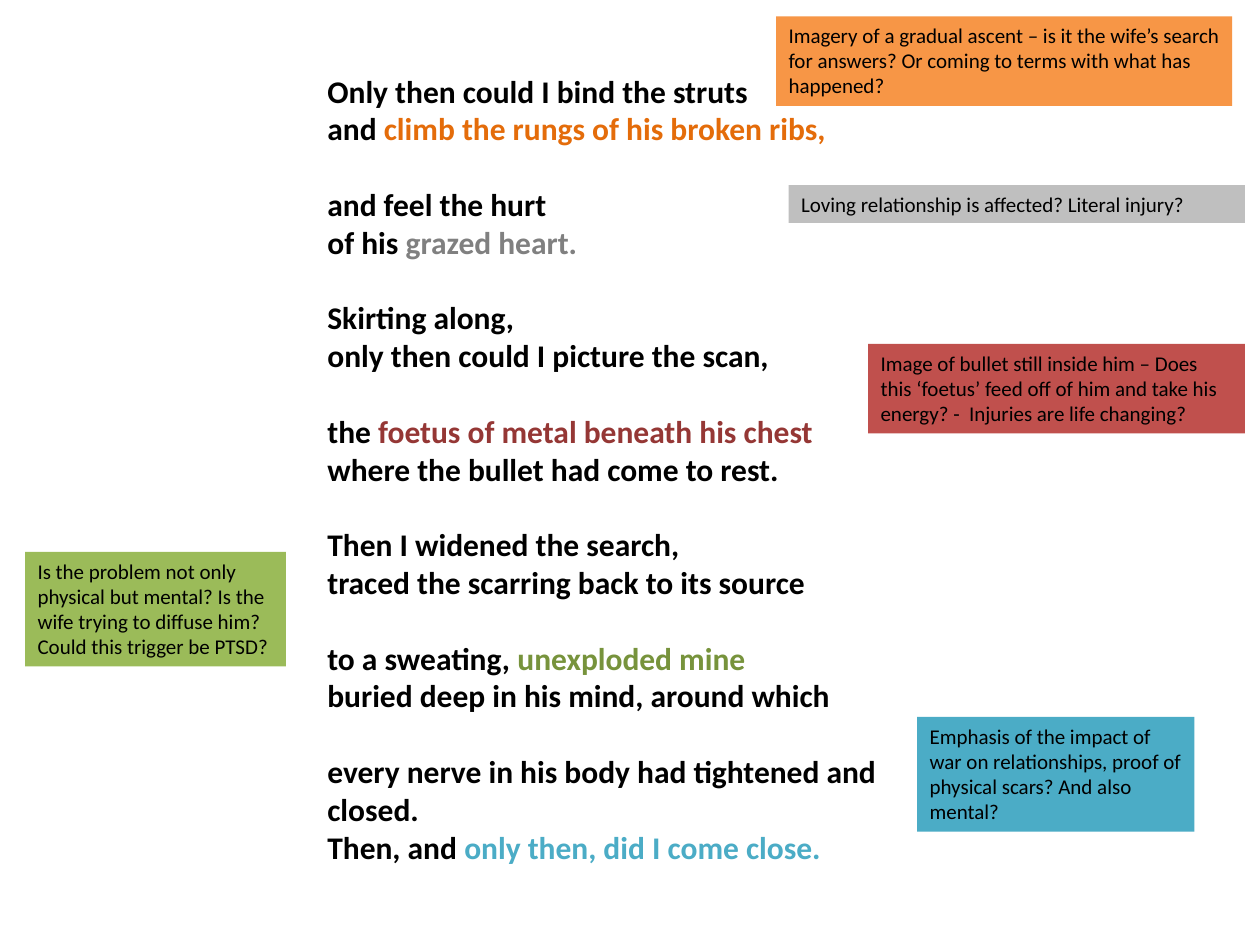
from pptx import Presentation
from pptx.dml.color import RGBColor
from pptx.enum.text import MSO_AUTO_SIZE
from pptx.util import Pt

PX = 9144
BLANK = 6
FIT_SHAPE = MSO_AUTO_SIZE.SHAPE_TO_FIT_TEXT

BLACK = "000000"
ORANGE = "E46C0A"
GREY = "808080"
RED = "953735"
GREEN = "77933C"
BLUE = "4BACC6"

STANZAS = [
    [[("Only then could I bind the struts", BLACK)],
     [("and ", BLACK), ("climb the rungs of his broken ribs,", ORANGE)]],
    [[("and feel the hurt", BLACK)],
     [("of his ", BLACK), ("grazed heart.", GREY)]],
    [[("Skirting along,", BLACK)],
     [("only then could I picture the scan,", BLACK)]],
    [[("the ", BLACK), ("foetus of metal beneath his chest", RED)],
     [("where the bullet had come to rest.", BLACK)]],
    [[("Then I widened the search,", BLACK)],
     [("traced the scarring back to its source", BLACK)]],
    [[("to a sweating, ", BLACK), ("unexploded mine", GREEN)],
     [("buried deep in his mind, around which", BLACK)]],
    [[("every nerve in his body had tightened and closed.", BLACK)],
     [("Then, and ", BLACK), ("only then, did I come close.", BLUE)]],
]

NOTES = [
    (616, 13, 362, 71, "F79646",
     "Imagery of a gradual ascent – is it the wife’s search for answers? "
     "Or coming to terms with what has happened?"),
    (626, 147, 362, 30, "BFBFBF",
     "Loving relationship is affected? Literal injury?"),
    (689, 273, 299, 71, "C0504D",
     "Image of bullet still inside him – Does this ‘foetus’ feed off of him "
     "and take his energy? -  Injuries are life changing?"),
    (20, 438, 207, 91, "9BBB59",
     "Is the problem not only physical but mental? Is the wife trying to "
     "diffuse him? Could this trigger be PTSD?"),
    (728, 569, 220, 91, BLUE,
     "Emphasis of the impact of war on relationships, proof of physical "
     "scars? And also mental?"),
]


def color(value):
    return RGBColor.from_string(value)


class PoemPage:
    font_name = "Calibri"
    poem_size = 18
    note_size = 12
    stanza_gap = 21.6

    def __init__(self, deck):
        self.page = deck.slides.add_slide(deck.slide_layouts[BLANK])

    def text_box(self, left, top, width, height):
        box = self.page.shapes.add_textbox(
            left * PX, top * PX, width * PX, height * PX)
        box.text_frame.word_wrap = True
        box.text_frame.auto_size = FIT_SHAPE
        return box

    def style(self, para, size, bold=False):
        para.font.name = self.font_name
        para.font.size = Pt(size)
        para.font.bold = bold

    def poem(self, left, top, width, height, stanzas):
        frame = self.text_box(left, top, width, height).text_frame
        para = frame.paragraphs[0]
        for stanza_number, stanza in enumerate(stanzas):
            for line_number, line in enumerate(stanza):
                if stanza_number or line_number:
                    para = frame.add_paragraph()
                if stanza_number and not line_number:
                    para.space_before = Pt(self.stanza_gap)
                self.style(para, self.poem_size, bold=True)
                for text, ink in line:
                    span = para.add_run()
                    span.text = text
                    span.font.color.rgb = color(ink)

    def note(self, left, top, width, height, fill, text):
        box = self.text_box(left, top, width, height)
        box.fill.solid()
        box.fill.fore_color.rgb = color(fill)
        para = box.text_frame.paragraphs[0]
        para.text = text
        self.style(para, self.note_size)
        para.font.color.rgb = color(BLACK)


def main():
    deck = Presentation()
    deck.slide_width = 1000 * PX
    deck.slide_height = 750 * PX
    page = PoemPage(deck)
    page.poem(250, 52, 500, 646, STANZAS)
    for note in NOTES:
        page.note(*note)
    deck.save("out.pptx")


if __name__ == "__main__":
    main()
